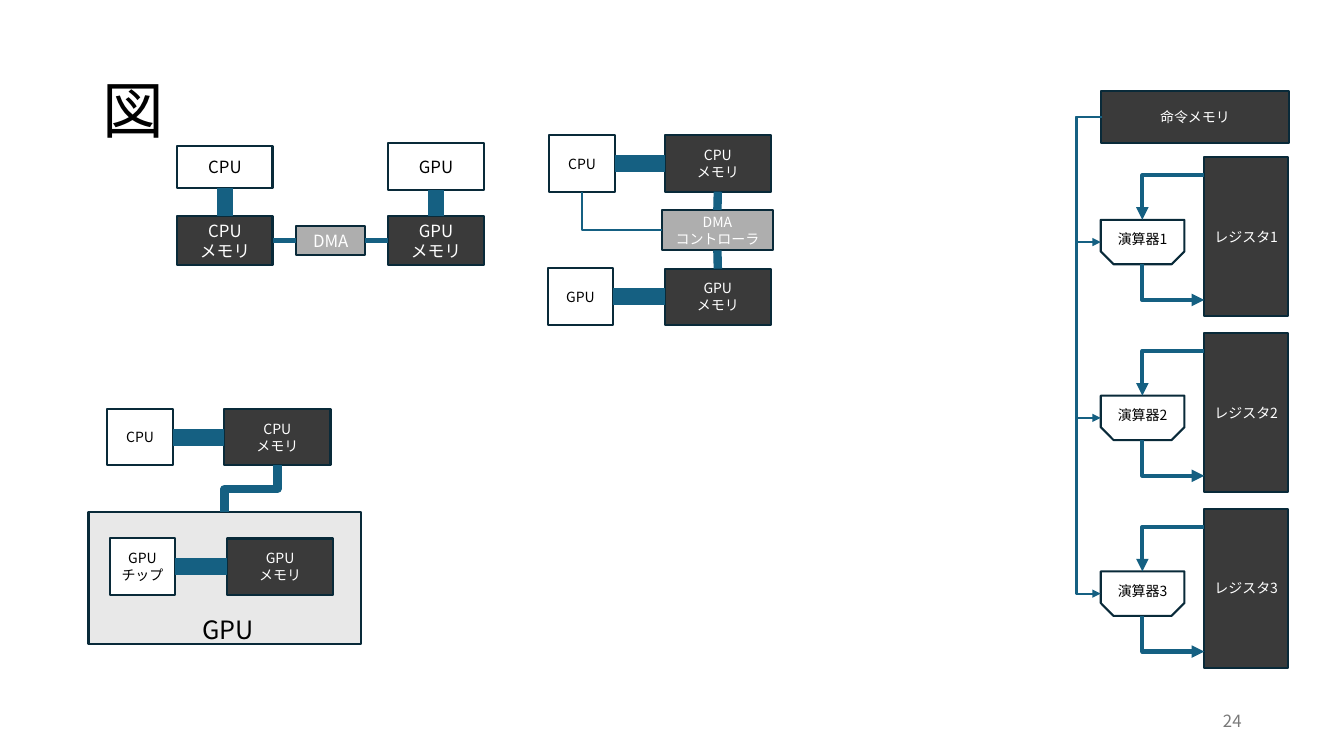
from lxml.etree import SubElement
from pptx import Presentation
from pptx.dml.color import RGBColor
from pptx.enum.shapes import MSO_CONNECTOR, MSO_SHAPE
from pptx.enum.text import MSO_ANCHOR, PP_ALIGN
from pptx.oxml.ns import qn
from pptx.util import Cm, Pt

FONT = "Noto Sans CJK JP"
WHITE, BLACK, DARK, GRAY, PALE = "FFFFFF", "000000", "3A3A3A", "AEAEAE", "E8E8E8"
EDGE, BLUE = "092A39", "156082"
RECT = MSO_SHAPE.RECTANGLE
TOP, LEFT, BOTTOM, RIGHT = range(4)

prs = Presentation()
prs.slide_width, prs.slide_height = Cm(33.87), Cm(19.05)
slide = prs.slides.add_slide(prs.slide_layouts[6])
shapes = slide.shapes


def box(kind, x, y, w, h, text, size, fill=None, color=WHITE, align=PP_ALIGN.CENTER):
    frame = Cm(x), Cm(y), Cm(w), Cm(h)
    if kind is None:
        sp = shapes.add_textbox(*frame)
    else:
        sp = shapes.add_shape(kind, *frame)
        sp.shadow.inherit = False
        sp.fill.solid()
        sp.fill.fore_color.rgb = RGBColor.from_string(fill)
        sp.line.color.rgb = RGBColor.from_string(EDGE)
        sp.line.width = Pt(1.5)
    tf = sp.text_frame
    tf.word_wrap = True
    tf.vertical_anchor = MSO_ANCHOR.MIDDLE
    if text:
        p = tf.paragraphs[0]
        p.text = text
        p.alignment = align
        p.font.size = Pt(size)
        p.font.color.rgb = RGBColor.from_string(color)
        p.font.name = FONT
        SubElement(p._p.pPr.find(qn("a:defRPr")), qn("a:ea"), typeface=FONT)
    return sp


def link(route, x1, y1, x2, y2, width, arrow=False, down_first=False):
    if down_first:
        cx, cy, dx, dy = (x1 + x2) / 2, (y1 + y2) / 2, (x2 - x1) / 2, (y2 - y1) / 2
        x1, y1, x2, y2 = cx - dy, cy + dx, cx + dy, cy - dx
    kind = MSO_CONNECTOR.STRAIGHT if route == "line" else MSO_CONNECTOR.ELBOW
    c = shapes.add_connector(kind, Cm(x1), Cm(y1), Cm(x2), Cm(y2))
    c.line.color.rgb = RGBColor.from_string(BLUE)
    c.line.width = Pt(width)
    props = c._element.spPr
    props.find(qn("a:prstGeom")).set("prst", route)
    if down_first:
        props.find(qn("a:xfrm")).set("rot", "5400000")
    if arrow:
        SubElement(props.find(qn("a:ln")), qn("a:tailEnd"), type="triangle")
    SubElement(props, qn("a:effectLst"))
    return c


title = box(None, 2.33, 1.01, 29.21, 3.68, "図", 44, color=BLACK, align=PP_ALIGN.LEFT)
title.text_frame.paragraphs[0].line_spacing = 0.9
box(None, 23.92, 17.66, 7.62, 1.01, "24", 12, color="797979", align=PP_ALIGN.RIGHT)

for i in range(3):
    y = 3.96 + 4.43 * i
    box(RECT, 30.35, y, 2.11, 4.01, f"レジスタ{i + 1}", 10, DARK)
    alu = box(MSO_SHAPE.SNIP_2_SAME_RECTANGLE, 27.74, y + 1.58, 2.11, 1.12,
              f"演算器{i + 1}", 10, WHITE, BLACK)
    alu.adjustments[0], alu.adjustments[1] = 0, 0.29
    link("bentConnector2", 30.35, y + 0.46, 28.79, y + 1.58, 3, arrow=True)
    link("bentConnector2", 28.79, y + 2.7, 30.35, y + 3.6, 3, arrow=True, down_first=True)

box(RECT, 27.74, 2.29, 4.75, 1.32, "命令メモリ", 10, DARK)
bus_start, bus_end, bus_x = 27.77, 27.74, 27.13
bend = round((bus_start - bus_x) / (bus_start - bus_end) * 100000)
for i in range(3):
    c = link("bentConnector3", bus_start, 2.95, bus_end, 6.1 + 4.43 * i, 1.5, arrow=True)
    guides = c._element.spPr.find(qn("a:prstGeom")).find(qn("a:avLst"))
    SubElement(guides, qn("a:gd"), name="adj1", fmla=f"val {bend}")

cpu = box(RECT, 4.47, 3.69, 2.4, 1.04, "CPU", 12, WHITE, BLACK)
cpu_mem = box(RECT, 4.47, 5.45, 2.4, 1.22, "CPU\nメモリ", 12, DARK)
gpu = box(RECT, 9.79, 3.61, 2.4, 1.18, "GPU", 12, WHITE, BLACK)
gpu_mem = box(RECT, 9.79, 5.45, 2.4, 1.22, "GPU\nメモリ", 12, DARK)
dma = box(RECT, 7.47, 5.69, 1.73, 0.74, "DMA", 12, GRAY)

cpu2 = box(RECT, 13.84, 3.41, 1.66, 1.42, "CPU", 10, WHITE, BLACK)
cpu_mem2 = box(RECT, 16.75, 3.41, 2.68, 1.42, "CPU\nメモリ", 10, DARK)
gpu2 = box(RECT, 13.81, 6.76, 1.64, 1.44, "GPU", 10, WHITE, BLACK)
gpu_mem2 = box(RECT, 16.75, 6.77, 2.68, 1.42, "GPU\nメモリ", 10, DARK)
dma2 = box(RECT, 16.68, 5.29, 2.8, 1.02, "DMA\nコントローラ", 10, GRAY)
link("bentConnector2", 14.67, 4.83, 16.68, 5.8, 1.5, down_first=True)

cpu3 = box(RECT, 2.7, 10.31, 1.66, 1.42, "CPU", 10, WHITE, BLACK)
cpu_mem3 = box(RECT, 5.65, 10.31, 2.68, 1.42, "CPU\nメモリ", 10, DARK)
box(RECT, 2.23, 12.91, 6.87, 3.33, "", 10, PALE)
chip = box(RECT, 2.77, 13.56, 1.64, 1.44, "GPU\nチップ", 10, WHITE, BLACK)
gpu_mem3 = box(RECT, 5.72, 13.57, 2.68, 1.42, "GPU\nメモリ", 10, DARK)
box(None, 4.32, 15.34, 2.87, 1.02, "GPU", 18, color=BLACK)
link("bentConnector3", 6.99, 11.73, 5.66, 12.91, 6, down_first=True)

for start, side1, end, side2, width in [
    (cpu, BOTTOM, cpu_mem, TOP, 12),
    (gpu, BOTTOM, gpu_mem, TOP, 12),
    (dma, LEFT, cpu_mem, RIGHT, 3),
    (dma, RIGHT, gpu_mem, LEFT, 3),
    (cpu2, RIGHT, cpu_mem2, LEFT, 12),
    (cpu_mem2, BOTTOM, dma2, TOP, 6),
    (dma2, BOTTOM, gpu_mem2, TOP, 6),
    (gpu2, RIGHT, gpu_mem2, LEFT, 12),
    (cpu3, RIGHT, cpu_mem3, LEFT, 12),
    (chip, RIGHT, gpu_mem3, LEFT, 12),
]:
    c = link("line", 0, 0, 0, 0, width)
    c.begin_connect(start, side1)
    c.end_connect(end, side2)

prs.save("out.pptx")
